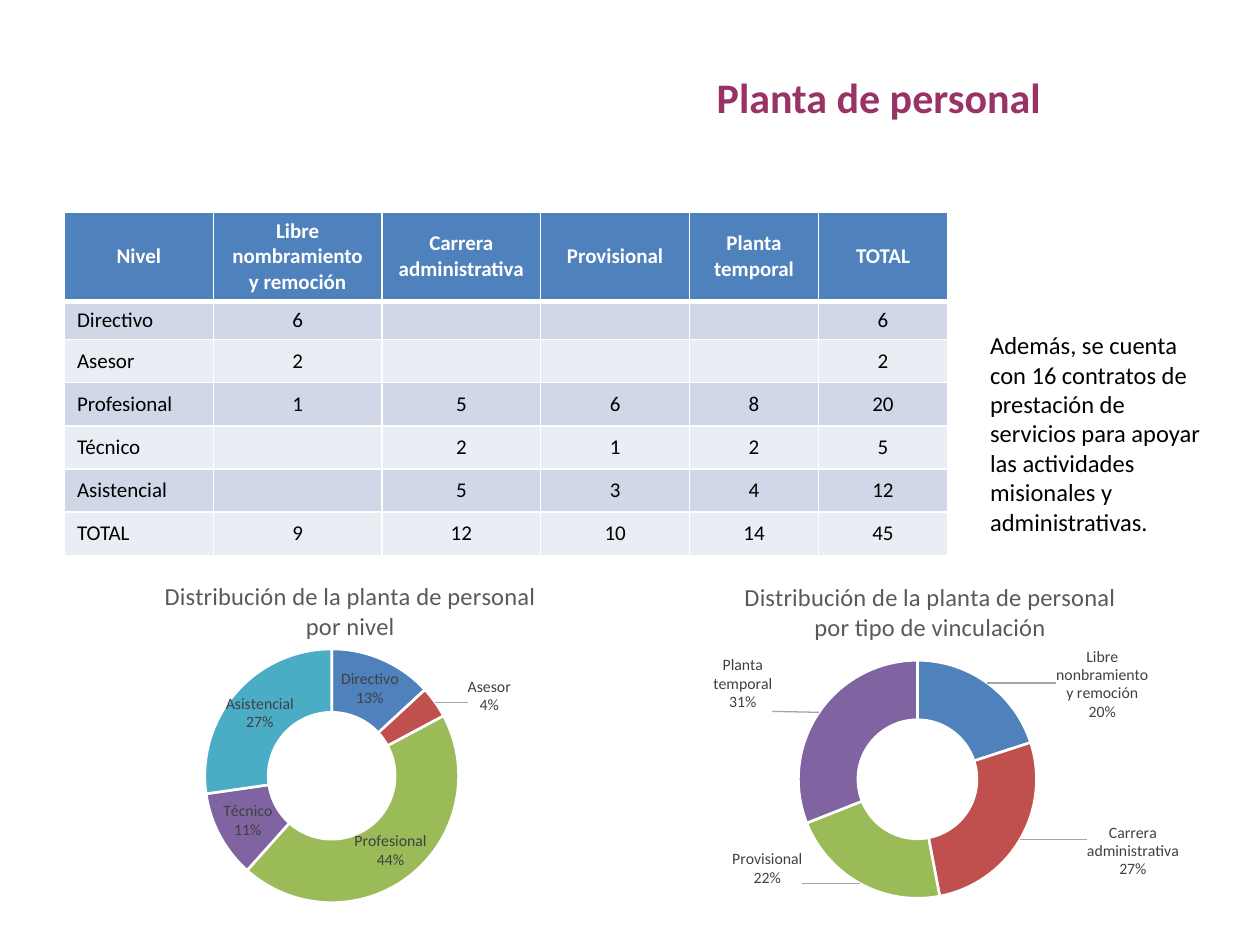
from lxml import etree
from pptx import Presentation
from pptx.chart.data import CategoryChartData
from pptx.dml.color import RGBColor
from pptx.enum.chart import XL_CHART_TYPE
from pptx.enum.text import MSO_ANCHOR, MSO_AUTO_SIZE, PP_ALIGN
from pptx.oxml import parse_xml
from pptx.oxml.ns import nsdecls, qn
from pptx.util import Cm, Pt

DOUGHNUT = XL_CHART_TYPE.DOUGHNUT
MIDDLE = MSO_ANCHOR.MIDDLE
FIT_SHAPE = MSO_AUTO_SIZE.SHAPE_TO_FIT_TEXT
LEFT, CENTER = PP_ALIGN.LEFT, PP_ALIGN.CENTER

FONT = "Calibri"
COLORS = {
    "title": "993366", "text": "000000", "white": "FFFFFF",
    "header": "4F81BD", "odd": "D0D8E8", "even": "E9EDF4",
    "chart_title": "595959", "label": "404040", "leader": "A6A6A6",
}
SLICE_COLORS = ["4F81BD", "C0504D", "9BBB59", "8064A2", "4BACC6"]

STAFF_HEADER = ["Nivel", "Libre nombramiento y remoción", "Carrera administrativa",
                "Provisional", "Planta temporal", "TOTAL"]
STAFF_ROWS = [
    ["Directivo", "6", "", "", "", "6"],
    ["Asesor", "2", "", "", "", "2"],
    ["Profesional", "1", "5", "6", "8", "20"],
    ["Técnico", "", "2", "1", "2", "5"],
    ["Asistencial", "", "5", "3", "4", "12"],
    ["TOTAL", "9", "12", "10", "14", "45"],
]
COLUMN_WIDTHS = [3, 3.4, 3.2, 3, 2.6, 2.6]
ROW_HEIGHTS = [1.75, 0.76] + [0.87] * 5

LEVEL_CHART = {
    "title": "Distribución de la planta de personal\npor nivel",
    "shares": {"Directivo": 13, "Asesor": 4, "Profesional": 44,
               "Técnico": 11, "Asistencial": 27},
    "plot": (0.25, 0.25, 0.44, 0.73),
    "label_offsets": {1: (0.13, -0.07)},
}
CONTRACT_CHART = {
    "title": "Distribución de la planta de personal\npor tipo de vinculación",
    "shares": {"Libre nonbramiento y remoción": 20, "Carrera administrativa": 27,
               "Provisional": 22, "Planta temporal": 31},
    "plot": (0.29, 0.26, 0.38, 0.63),
    "label_offsets": {0: (0.21, -0.06), 1: (0.22, 0.07),
                      2: (-0.17, 0.03), 3: (-0.16, -0.12)},
}


def style_font(font, size, color, bold=False):
    """Set typeface, size, colour and weight of a font."""
    font.name, font.size, font.bold = FONT, Pt(size), bold
    font.color.rgb = RGBColor.from_string(COLORS[color])


def add_title(slide, box, text):
    """Move the title placeholder into the box and format it."""
    title = slide.shapes.title
    title.left, title.top, title.width, title.height = map(Cm, box)
    title.text_frame.text = text
    paragraph = title.text_frame.paragraphs[0]
    paragraph.alignment = CENTER
    style_font(paragraph.font, 24, "title", True)


def set_borders(cell, bottom):
    """Give a cell white borders, with its own bottom width in points."""
    properties = cell._tc.get_or_add_tcPr()
    widths = {"lnL": 1, "lnR": 1, "lnT": 1, "lnB": bottom}
    for position, (tag, width) in enumerate(widths.items()):
        properties.insert(position, parse_xml(
            f'<a:{tag} {nsdecls("a")} w="{Pt(width)}"><a:solidFill>'
            f'<a:srgbClr val="{COLORS["white"]}"/></a:solidFill></a:{tag}>'))


def fill_cell(cell, text, row, column):
    """Write and format one table cell according to its place."""
    is_header = row == 0
    fill = "header" if is_header else ("even", "odd")[row % 2]
    cell.fill.solid()
    cell.fill.fore_color.rgb = RGBColor.from_string(COLORS[fill])
    cell.vertical_anchor = MIDDLE
    cell.text = text
    paragraph = cell.text_frame.paragraphs[0]
    paragraph.alignment = CENTER if is_header or column else LEFT
    style_font(paragraph.font, 12, "white" if is_header else "text", is_header)
    if not text:
        paragraph._p.get_or_add_endParaRPr().set("sz", "1200")
    set_borders(cell, 3 if is_header else 1)


def add_staff_table(slide, left, top):
    """Place the staff table with its corner at the given point."""
    rows = [STAFF_HEADER] + STAFF_ROWS
    table = slide.shapes.add_table(
        len(rows), len(STAFF_HEADER), Cm(left), Cm(top),
        Cm(sum(COLUMN_WIDTHS)), Cm(sum(ROW_HEIGHTS))).table
    for column, width in zip(table.columns, COLUMN_WIDTHS):
        column.width = Cm(width)
    for table_row, height in zip(table.rows, ROW_HEIGHTS):
        table_row.height = Cm(height)
    for row, texts in enumerate(rows):
        for column, text in enumerate(texts):
            fill_cell(table.cell(row, column), text, row, column)


def manual_layout(**values):
    """Build a chart layout element from its named values."""
    children = "".join(f'<c:{tag} val="{value}"/>' for tag, value in values.items())
    return parse_xml(f'<c:layout {nsdecls("c")}><c:manualLayout>{children}'
                     '</c:manualLayout></c:layout>')


def place_plot(chart, plot):
    """Fix the inner plot area as fractions of the chart."""
    area = chart._chartSpace.chart.plotArea
    for layout in area.findall(qn("c:layout")):
        area.remove(layout)
    x, y, w, h = plot
    area.insert(0, manual_layout(layoutTarget="inner", xMode="edge", yMode="edge",
                                 x=x, y=y, w=w, h=h))


def format_labels(series, offsets):
    """Show category and percentage, moving some labels out on leader lines."""
    labels = series.data_labels
    style_font(labels.font, 9, "label")
    labels.show_value = False
    labels.show_category_name = labels.show_percentage = True
    for index in offsets:
        style_font(series.points[index].data_label.font, 9, "label")
    group = series._element.find(qn("c:dLbls"))
    for label in group.findall(qn("c:dLbl")):
        x, y = offsets[int(label.find(qn("c:idx")).get("val"))]
        label.find(qn("c:idx")).addnext(manual_layout(x=x, y=y))
        for tag, shown in (("showVal", "0"), ("showCatName", "1"), ("showPercent", "1")):
            label.find(qn(f"c:{tag}")).set("val", shown)
    for element in [group, *group.findall(qn("c:dLbl"))]:
        separator = etree.Element(qn("c:separator"))
        separator.text = "\n"
        element.find(qn("c:showBubbleSize")).addnext(separator)
    for element in group.findall(qn("c:showLeaderLines")):
        group.remove(element)
    group.append(parse_xml(f'<c:showLeaderLines {nsdecls("c")} val="1"/>'))
    group.append(parse_xml(
        f'<c:leaderLines {nsdecls("c", "a")}><c:spPr><a:ln w="9525"><a:solidFill>'
        f'<a:srgbClr val="{COLORS["leader"]}"/></a:solidFill></a:ln></c:spPr>'
        '</c:leaderLines>'))


def add_doughnut(slide, box, content):
    """Place a titled doughnut chart in the box."""
    data = CategoryChartData()
    data.categories = list(content["shares"])
    data.add_series("Series 1", list(content["shares"].values()))
    chart = slide.shapes.add_chart(DOUGHNUT, *map(Cm, box), data).chart
    style_font(chart.font, 10, "text")
    chart.has_legend = False
    chart.has_title = True
    chart.chart_title.include_in_layout = False
    chart.chart_title.text_frame.text = content["title"]
    for paragraph in chart.chart_title.text_frame.paragraphs:
        style_font(paragraph.font, 14, "chart_title")
    place_plot(chart, content["plot"])
    plot = chart.plots[0]
    plot.vary_by_categories = True
    series = plot.series[0]
    for index, color in enumerate(SLICE_COLORS[:len(content["shares"])]):
        slice_format = series.points[index].format
        slice_format.fill.solid()
        slice_format.fill.fore_color.rgb = RGBColor.from_string(color)
        slice_format.line.width = Pt(1.5)
        slice_format.line.color.rgb = RGBColor.from_string(COLORS["white"])
    format_labels(series, content["label_offsets"])


def add_note(slide, box, text):
    """Place a wrapped text note in the box."""
    frame = slide.shapes.add_textbox(*map(Cm, box)).text_frame
    frame.word_wrap = True
    frame.auto_size = FIT_SHAPE
    frame.text = text
    style_font(frame.paragraphs[0].font, 14, "text")


def main():
    """Build the staffing slide and save it."""
    presentation = Presentation()
    presentation.slide_width, presentation.slide_height = Cm(25.4), Cm(19.05)
    slide = presentation.slides.add_slide(presentation.slide_layouts[5])
    add_title(slide, (10.31, 1.32, 14.81, 1.27), "Planta de personal")
    add_staff_table(slide, 1.3, 4.27)
    add_doughnut(slide, (0.86, 11.33, 12.4, 7.01), LEVEL_CHART)
    add_doughnut(slide, (12.4, 11.33, 12.7, 7.62), CONTRACT_CHART)
    add_note(slide, (19.71, 6.53, 5, 4.45),
             "Además, se cuenta con 16 contratos de prestación de servicios "
             "para apoyar las actividades misionales y administrativas.")
    presentation.save("out.pptx")


if __name__ == "__main__":
    main()
